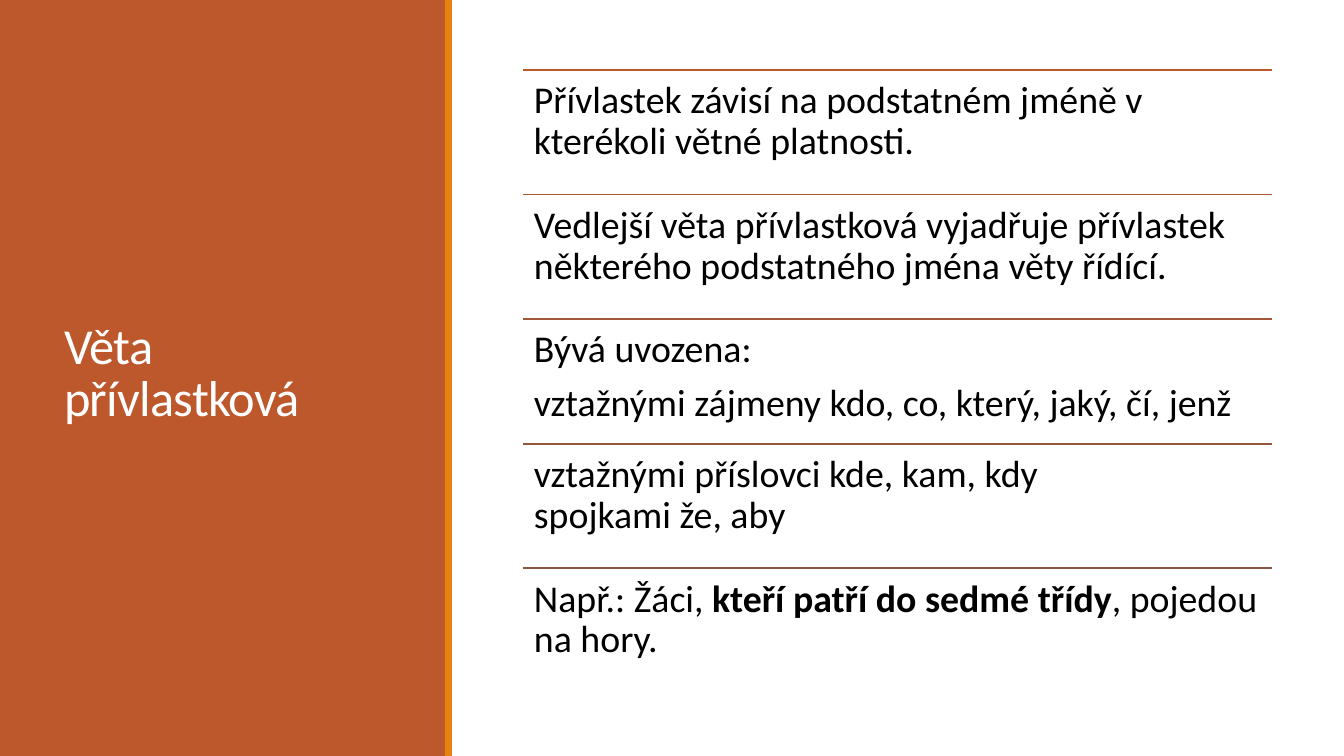
from pptx import Presentation
from pptx.dml.color import RGBColor
from pptx.enum.shapes import MSO_CONNECTOR, MSO_SHAPE
from pptx.enum.text import MSO_ANCHOR
from pptx.oxml.ns import qn
from pptx.util import Pt
from lxml import etree

TITLE = "Věta přívlastková"
BREAK = "\n"
ROWS = [
    [[("Přívlastek závisí na podstatném jméně v kterékoli větné platnosti.", False)]],
    [[("Vedlejší věta přívlastková vyjadřuje přívlastek některého podstatného jména věty řídící.", False)]],
    [[("Bývá uvozena:", False)],
     [("vztažnými zájmeny kdo, co, který, jaký, čí, jenž", False)]],
    [[("vztažnými příslovci kde, kam, kdy", False), (BREAK, False), ("spojkami že, aby", False)]],
    [[("Např.: Žáci, ", False), ("kteří patří do sedmé třídy", True), (", pojedou na hory.", False)]],
]

RUST = RGBColor(0xBD, 0x58, 0x2C)
ORANGE = RGBColor(0xE4, 0x83, 0x12)
WHITE = RGBColor(0xFF, 0xFF, 0xFF)
BLACK = RGBColor(0, 0, 0)
RULE_COLORS = [RUST, RGBColor(0xAE, 0x58, 0x32), RGBColor(0xA0, 0x58, 0x37),
               RGBColor(0x93, 0x57, 0x3C), RGBColor(0x86, 0x56, 0x40)]

RECTANGLE = MSO_SHAPE.RECTANGLE
STRAIGHT = MSO_CONNECTOR.STRAIGHT
TOP, MIDDLE = MSO_ANCHOR.TOP, MSO_ANCHOR.MIDDLE

FONT = "Calibri"
WIDTH, HEIGHT = 1344, 756
LIST_LEFT, LIST_WIDTH = 523, 749
LIST_TOP, LIST_BOTTOM = 70, 693
ROW_HEIGHT = (LIST_BOTTOM - LIST_TOP) / len(ROWS)


def px(length):
    return round(length * 914400 / 100.8)


def add_bar(slide, left, width, color):
    bar = slide.shapes.add_shape(RECTANGLE, px(left), 0, px(width), px(HEIGHT))
    bar.shadow.inherit = False
    bar.fill.solid()
    bar.fill.fore_color.rgb = color
    bar.line.fill.background()


def add_rule(slide, top, color):
    rule = slide.shapes.add_connector(
        STRAIGHT, px(LIST_LEFT), px(top), px(LIST_LEFT + LIST_WIDTH), px(top))
    rule.line.color.rgb = color
    rule.line.width = Pt(1.25)
    etree.SubElement(rule._element.spPr, qn("a:effectLst"))


def add_text(slide, paragraphs, left, top, width, height, *, size, color,
             anchor=TOP, inset=11, line_spacing=0.9, space_after=0, tracking=0):
    box = slide.shapes.add_textbox(px(left), px(top), px(width), px(height))
    frame = box.text_frame
    frame.word_wrap = True
    frame.vertical_anchor = anchor
    frame.margin_left = frame.margin_right = px(inset)
    frame.margin_top = frame.margin_bottom = px(inset)
    for index, pieces in enumerate(paragraphs):
        paragraph = frame.add_paragraph() if index else frame.paragraphs[0]
        paragraph.line_spacing = line_spacing
        paragraph.space_after = Pt(space_after)
        for text, bold in pieces:
            if text == BREAK:
                paragraph.add_line_break()
                continue
            run = paragraph.add_run()
            run.text = text
            run.font.name = FONT
            run.font.size = Pt(size)
            run.font.bold = bold
            run.font.color.rgb = color
            if tracking:
                run.font._element.set("spc", str(round(tracking * 100)))


def main():
    presentation = Presentation()
    presentation.slide_width = px(WIDTH)
    presentation.slide_height = px(HEIGHT)
    slide = presentation.slides.add_slide(presentation.slide_layouts[6])

    add_bar(slide, 0, 446, RUST)
    add_text(slide, [[(TITLE, False)]], 54, 57, 340, 636, size=36, color=WHITE,
             anchor=MIDDLE, inset=10, line_spacing=0.85, tracking=-0.5)
    add_bar(slide, 445, 7, ORANGE)

    for index, (paragraphs, color) in enumerate(zip(ROWS, RULE_COLORS)):
        top = LIST_TOP + index * ROW_HEIGHT
        add_rule(slide, top, color)
        add_text(slide, paragraphs, LIST_LEFT, top, LIST_WIDTH, ROW_HEIGHT,
                 size=27, color=BLACK, space_after=9.45)

    presentation.save("out.pptx")


if __name__ == "__main__":
    main()
